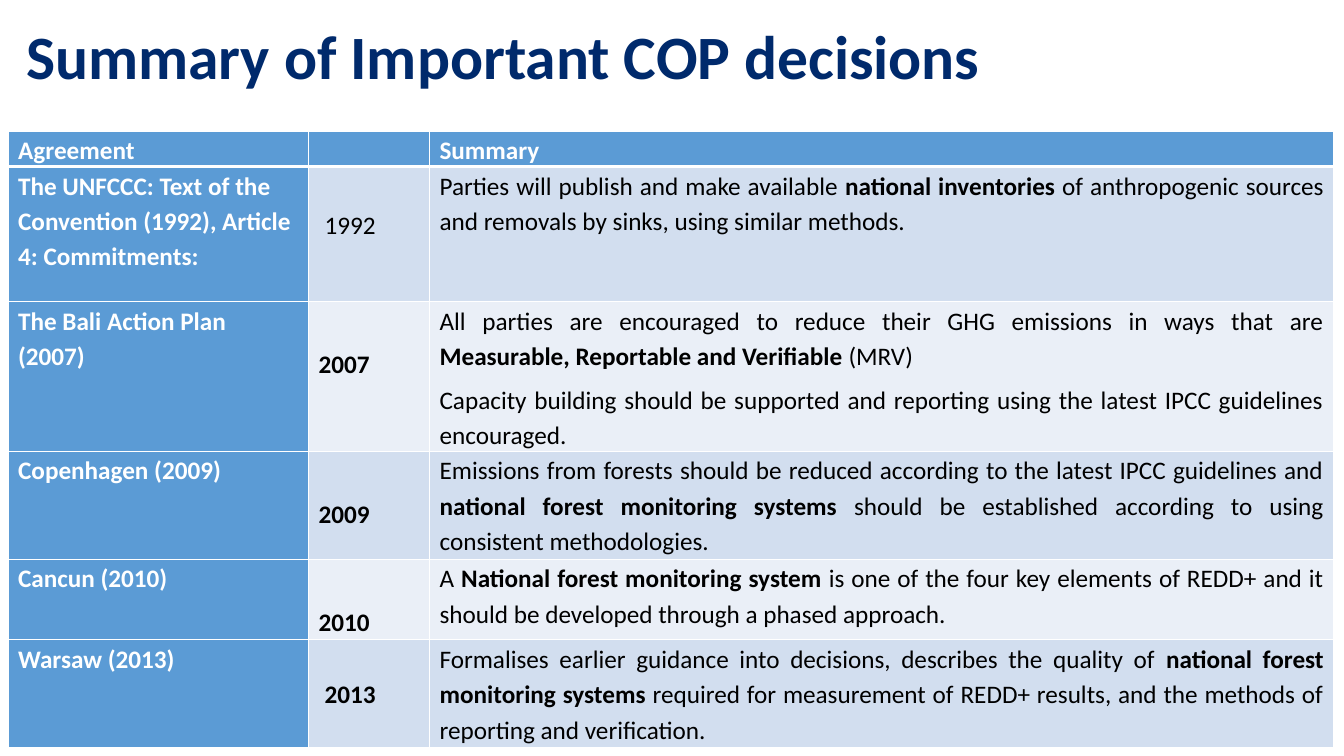
from lxml.etree import SubElement
from pptx import Presentation
from pptx.dml.color import RGBColor
from pptx.enum.text import MSO_ANCHOR, MSO_AUTO_SIZE, PP_ALIGN
from pptx.oxml.ns import qn
from pptx.util import Inches, Pt

# Palette
NAVY, BLUE, WHITE, BLACK = "002A6C", "5B9BD5", "FFFFFF", "000000"
BANDS = ["D2DEEF", "EAEFF7"]

# Table grid, in percent of the slide's width and height
COLUMNS = [22.36, 9, 67.29]
ROWS = [4.13, 17.87, 18.13, 14.27, 10.67, 14.27]

# Agreement, year, drop and indent of the year (inches), summary paragraphs
DECISIONS = [
    ("The UNFCCC: Text of the Convention (1992), Article 4: Commitments:",
     "1992", 0.39, 0.16,
     ["Parties will publish and make available **national inventories** of "
      "anthropogenic sources and removals by sinks, using similar methods."]),
    ("The Bali Action Plan (2007)", "**2007**", 0.43, 0.1,
     ["All parties are encouraged to reduce their GHG emissions in ways that are "
      "**Measurable, Reportable and Verifiable **(MRV)",
      "Capacity building should be supported and reporting using the latest "
      "IPCC guidelines encouraged."]),
    ("Copenhagen (2009)", "**2009**", 0.43, 0.1,
     ["Emissions from forests should be reduced according to the latest IPCC "
      "guidelines and **national forest monitoring systems **should be "
      "established according to using consistent methodologies."]),
    ("Cancun (2010)", "**2010**", 0.43, 0.1,
     ["A **National forest monitoring system **is one of the four key elements "
      "of REDD+ and it should be developed through a phased approach."]),
    ("Warsaw (2013)", "**2013**", 0.35, 0.16,
     ["Formalises earlier guidance into decisions, describes the quality of "
      "**national forest monitoring systems **required for measurement of REDD+ "
      "results, and the methods of reporting and verification."]),
]


def color(value):
    return RGBColor.from_string(value)


def apply(target, values):
    for name, value in values.items():
        setattr(target, name, value)


class SlideBuilder:
    font_name = "Calibri"
    body_format = {"line_spacing": 1.15, "space_after": Pt(6)}
    title_format = {"line_spacing": 0.9, "alignment": PP_ALIGN.LEFT}

    def __init__(self, presentation):
        self.width = presentation.slide_width
        self.height = presentation.slide_height
        self.slide = presentation.slides.add_slide(presentation.slide_layouts[5])

    def across(self, percent):
        return round(self.width * percent / 100)

    def down(self, percent):
        return round(self.height * percent / 100)

    def box(self, left, top, width, height):
        return {"left": self.across(left), "top": self.down(top),
                "width": self.across(width), "height": self.down(height)}

    def add_runs(self, paragraph, text, size, text_color, bold=False):
        """Add the text as runs; double asterisks switch bold on and off."""
        for index, part in enumerate(text.split("**")):
            if part:
                run = paragraph.add_run()
                run.text = part
                apply(run.font, {"name": self.font_name, "size": Pt(size),
                                 "bold": bold or index % 2 == 1})
                run.font.color.rgb = color(text_color)

    def title(self, text, box):
        shape = self.slide.shapes.title
        apply(shape, box)
        apply(shape.text_frame, {"word_wrap": True,
                                 "auto_size": MSO_AUTO_SIZE.NONE,
                                 "vertical_anchor": MSO_ANCHOR.MIDDLE})
        paragraph = shape.text_frame.paragraphs[0]
        apply(paragraph, self.title_format)
        self.add_runs(paragraph, text, 44, NAVY, bold=True)

    def table(self, left, top, columns, rows):
        box = self.box(left, top, sum(columns), sum(rows))
        table = self.slide.shapes.add_table(len(rows), len(columns), **box).table
        apply(table, {"first_row": False, "horz_banding": False})
        for column, share in zip(table.columns, columns):
            column.width = self.across(share)
        for row, share in zip(table.rows, rows):
            row.height = self.down(share)
        return table

    def borders(self, cell, bottom):
        properties = cell._tc.get_or_add_tcPr()
        for side, width in {"L": 1, "R": 1, "T": 1, "B": bottom}.items():
            line = SubElement(properties, qn(f"a:ln{side}"), w=str(Pt(width)))
            fill = SubElement(line, qn("a:solidFill"))
            SubElement(fill, qn("a:srgbClr"), val=WHITE)

    def cell(self, cell, texts, fill, text_color=BLACK, bold=False,
             alignment=PP_ALIGN.JUSTIFY, drop=0, indent=0.1, bottom=1):
        self.borders(cell, bottom)
        cell.fill.solid()
        cell.fill.fore_color.rgb = color(fill)
        apply(cell, {"margin_left": Inches(indent), "margin_right": Inches(0.1),
                     "margin_top": Inches(drop), "margin_bottom": 0})
        frame = cell.text_frame
        for index, text in enumerate(texts):
            paragraph = frame.add_paragraph() if index else frame.paragraphs[0]
            apply(paragraph, {**self.body_format, "alignment": alignment})
            self.add_runs(paragraph, text, 18, text_color, bold)


def main():
    presentation = Presentation()
    apply(presentation, {"slide_width": Inches(13.33), "slide_height": Inches(7.5)})
    builder = SlideBuilder(presentation)

    # Title
    builder.title("Summary of Important COP decisions",
                  builder.box(1.2, 0, 97.45, 15.73))

    # Header row
    table = builder.table(0.6, 17.33, COLUMNS, ROWS)
    for column, texts in enumerate([["Agreement"], [], ["Summary"]]):
        builder.cell(table.cell(0, column), texts, BLUE, WHITE, bold=True, bottom=3)

    # One row for each decision
    for row, decision in enumerate(DECISIONS, start=1):
        agreement, year, drop, indent, summary = decision
        band = BANDS[(row - 1) % 2]
        builder.cell(table.cell(row, 0), [agreement], BLUE, WHITE, bold=True,
                     alignment=PP_ALIGN.LEFT)
        builder.cell(table.cell(row, 1), [year], band, drop=drop, indent=indent)
        builder.cell(table.cell(row, 2), summary, band)

    presentation.save("out.pptx")


if __name__ == "__main__":
    main()
